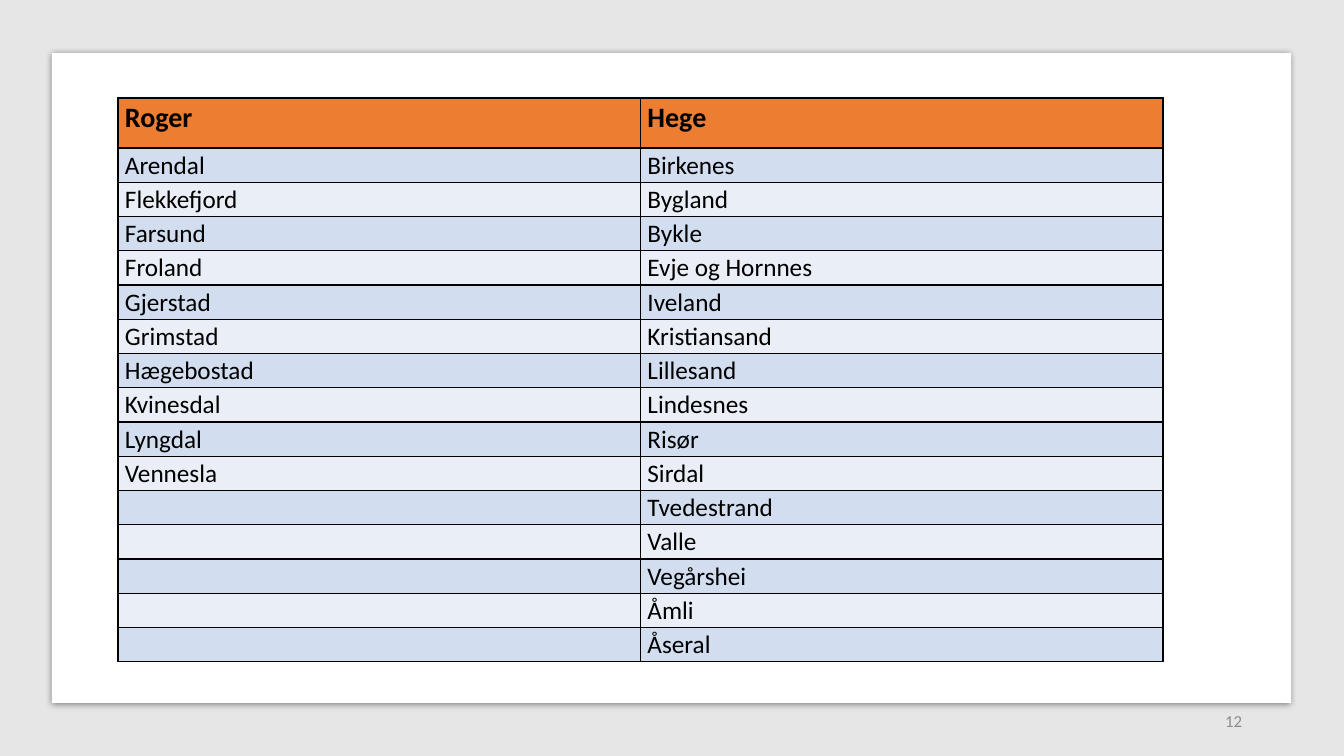
import lxml.etree
import pptx
import pptx.dml.color
import pptx.enum.shapes
import pptx.enum.text
import pptx.oxml
import pptx.oxml.ns
import pptx.util

HEADER = ("Roger", "Hege")
MUNICIPALITIES = [
    ("Arendal", "Birkenes"),
    ("Flekkefjord", "Bygland"),
    ("Farsund", "Bykle"),
    ("Froland", "Evje og Hornnes"),
    ("Gjerstad", "Iveland"),
    ("Grimstad", "Kristiansand"),
    ("Hægebostad", "Lillesand"),
    ("Kvinesdal", "Lindesnes"),
    ("Lyngdal", "Risør"),
    ("Vennesla", "Sirdal"),
    ("", "Tvedestrand"),
    ("", "Valle"),
    ("", "Vegårshei"),
    ("", "Åmli"),
    ("", "Åseral"),
]
PAGE_NUMBER = "12"

COLORS = {
    "backdrop": "E7E6E6",
    "panel": "FFFFFF",
    "header": "ED7D31",
    "odd_row": "D2DEEF",
    "even_row": "EAEFF7",
    "text": "000000",
    "border": "000000",
    "shadow": "000000",
    "page_number": "8C8C8C",
}
FONT = "Calibri"

# Left, top, width, height in px
SLIDE = (0, 0, 1344, 756)
PANEL = (52, 53, 1239, 650)
TABLE = (118, 98, 1045, 564)
NUMBER_BOX = (950, 701, 302, 40)
HEADER_HEIGHT = 50
CELL_INSET = 7
EMU_PER_PX = 914400 / 100.8


def px(length):
    return pptx.util.Emu(round(length * EMU_PER_PX))


def fill_solid(target, color):
    target.fill.solid()
    target.fill.fore_color.rgb = pptx.dml.color.RGBColor.from_string(COLORS[color])


def write_text(frame, text, size, color="text", bold=False, align="LEFT", spacing=None, after=None):
    paragraph = frame.paragraphs[0]
    paragraph.alignment = getattr(pptx.enum.text.PP_ALIGN, align)
    paragraph.line_spacing = spacing
    paragraph.space_after = after
    if not text:
        return
    run = paragraph.add_run()
    run.text = text
    run.font.name = FONT
    run.font.size = pptx.util.Pt(size)
    run.font.bold = bold
    run.font.color.rgb = pptx.dml.color.RGBColor.from_string(COLORS[color])


def add_rectangle(slide, box, color):
    shape = slide.shapes.add_shape(
        pptx.enum.shapes.MSO_SHAPE.RECTANGLE, *map(px, box))
    shape.shadow.inherit = False
    fill_solid(shape, color)
    shape.line.fill.background()
    return shape


def add_soft_shadow(shape):
    effects = shape._element.spPr.find(pptx.oxml.ns.qn("a:effectLst"))
    effects.append(pptx.oxml.parse_xml(
        f'<a:outerShdw {pptx.oxml.ns.nsdecls("a")} blurRad="{pptx.util.Pt(5)}" '
        f'dist="{pptx.util.Pt(1.4)}" dir="5400000" algn="t" rotWithShape="0">'
        f'<a:srgbClr val="{COLORS["shadow"]}"><a:alpha val="43000"/></a:srgbClr>'
        '</a:outerShdw>'))


def add_borders(cell):
    properties = cell._tc.get_or_add_tcPr()
    for side in ("lnL", "lnR", "lnT", "lnB"):
        line = lxml.etree.SubElement(
            properties, pptx.oxml.ns.qn(f"a:{side}"), w=str(pptx.util.Pt(1)))
        solid = lxml.etree.SubElement(line, pptx.oxml.ns.qn("a:solidFill"))
        lxml.etree.SubElement(solid, pptx.oxml.ns.qn("a:srgbClr"), val=COLORS["border"])


def add_municipality_table(slide):
    rows = [HEADER] + MUNICIPALITIES
    table = slide.shapes.add_table(len(rows), len(HEADER), *map(px, TABLE)).table
    body_height = (TABLE[3] - HEADER_HEIGHT) / len(MUNICIPALITIES)
    for column in table.columns:
        column.width = px(TABLE[2] / len(HEADER))
    for row_index, names in enumerate(rows):
        is_header = row_index == 0
        table.rows[row_index].height = px(HEADER_HEIGHT if is_header else body_height)
        color = "header" if is_header else "odd_row" if row_index % 2 else "even_row"
        for column_index, name in enumerate(names):
            cell = table.cell(row_index, column_index)
            cell.margin_left = cell.margin_right = px(CELL_INSET)
            cell.margin_top = cell.margin_bottom = 0
            add_borders(cell)
            fill_solid(cell, color)
            write_text(cell.text_frame, name, size=20 if is_header else 18,
                       bold=is_header, spacing=1.07)


def add_page_number(slide):
    frame = slide.shapes.add_textbox(*map(px, NUMBER_BOX)).text_frame
    frame.word_wrap = True
    frame.vertical_anchor = pptx.enum.text.MSO_ANCHOR.MIDDLE
    write_text(frame, PAGE_NUMBER, size=12, color="page_number", align="RIGHT",
               after=pptx.util.Pt(6))


def main():
    presentation = pptx.Presentation()
    presentation.slide_width, presentation.slide_height = map(px, SLIDE[2:])
    slide = presentation.slides.add_slide(presentation.slide_layouts[6])
    add_rectangle(slide, SLIDE, "backdrop")
    add_soft_shadow(add_rectangle(slide, PANEL, "panel"))
    add_page_number(slide)
    add_municipality_table(slide)
    presentation.save("out.pptx")


if __name__ == "__main__":
    main()
